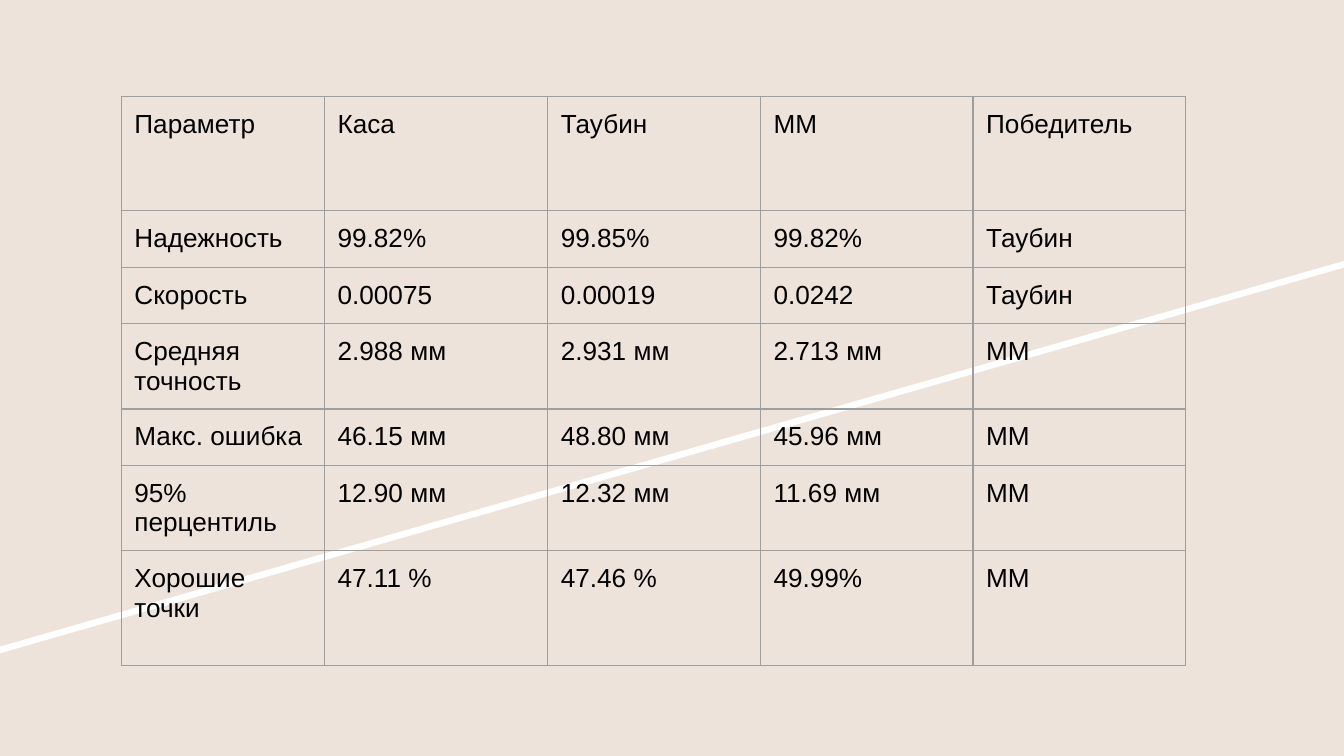
from lxml import etree
from pptx import Presentation
from pptx.dml.color import RGBColor
from pptx.oxml.ns import qn
from pptx.util import Cm, Pt

SLIDE_WIDTH, SLIDE_HEIGHT = Cm(25.4), Cm(14.29)
BEIGE, WHITE, BLACK, GREY = "EDE3DA", "FFFFFF", "000000", "9E9E9E"
STRIPE_OFFSET = 0.13
COLUMN_WIDTHS = [3.84, 4.22, 4.02, 4.02, 4.02]
ROW_HEIGHTS = [2.16, 1.07, 1.07, 1.61, 1.07, 1.61, 2.16]
CELL_MARGINS = {
    f"margin_{side}": Cm(0.25) for side in ("left", "top", "right", "bottom")
}
CELL_FONT = {"name": "Arial", "size": Pt(14), "bold": False}
RESULTS = [
    ["Параметр", "Каса", "Таубин", "ММ", "Победитель"],
    ["Надежность", "99.82%", "99.85%", "99.82%", "Таубин"],
    ["Скорость", "0.00075", "0.00019", "0.0242", "Таубин"],
    ["Средняя точность", "2.988 мм", "2.931 мм", "2.713 мм", "ММ"],
    ["Макс. ошибка", "46.15 мм", "48.80 мм", "45.96 мм", "ММ"],
    ["95% перцентиль", "12.90 мм", "12.32 мм", "11.69 мм", "ММ"],
    ["Хорошие точки", "47.11 %", "47.46 %", "49.99%", "MM"],
]


def paint(fill, color):
    """Fill with a solid colour given as a hex string."""
    fill.solid()
    fill.fore_color.rgb = RGBColor.from_string(color)


def set_attributes(target, values):
    """Set each named attribute of the target."""
    for name, value in values.items():
        setattr(target, name, value)


def add_slanted_panel(slide, top, color):
    """Add a full-width panel with a slanted lower edge."""
    corners = [(25.4, top), (25.4, top + 4.93), (0, top + 12.22)]
    builder = slide.shapes.build_freeform(0, Cm(top))
    builder.add_line_segments([(Cm(x), Cm(y)) for x, y in corners], close=True)
    panel = builder.convert_to_shape()
    paint(panel.fill, color)
    panel.line.fill.background()
    panel.shadow.inherit = False


def add_borders(cell, color, width):
    """Outline a cell on all four sides."""
    properties = cell._tc.get_or_add_tcPr()
    for side in ("lnL", "lnR", "lnT", "lnB"):
        border = etree.SubElement(properties, qn(f"a:{side}"), w=str(width))
        solid = etree.SubElement(border, qn("a:solidFill"))
        etree.SubElement(solid, qn("a:srgbClr"), val=color)


def fill_cell(cell, text):
    """Write and format one table cell."""
    set_attributes(cell, {"text": text, **CELL_MARGINS})
    font = cell.text_frame.paragraphs[0].runs[0].font
    set_attributes(font, CELL_FONT)
    paint(font.fill, BLACK)
    add_borders(cell, GREY, Pt(0.75))
    cell.fill.background()


def add_results_table(slide):
    """Add the table of results."""
    table = slide.shapes.add_table(
        len(RESULTS), len(COLUMN_WIDTHS), Cm(2.29), Cm(1.82),
        Cm(sum(COLUMN_WIDTHS)), Cm(sum(ROW_HEIGHTS)),
    ).table
    set_attributes(table, {"first_row": False, "horz_banding": False})
    for column, width in zip(table.columns, COLUMN_WIDTHS):
        column.width = Cm(width)
    for row, height, values in zip(table.rows, ROW_HEIGHTS, RESULTS):
        row.height = Cm(height)
        for cell, value in zip(row.cells, values):
            fill_cell(cell, value)


def main():
    """Build and save the slide."""
    deck = Presentation()
    set_attributes(deck, {"slide_width": SLIDE_WIDTH, "slide_height": SLIDE_HEIGHT})
    slide = deck.slides.add_slide(deck.slide_layouts[6])
    paint(slide.background.fill, BEIGE)
    add_slanted_panel(slide, STRIPE_OFFSET, WHITE)
    add_slanted_panel(slide, 0, BEIGE)
    add_results_table(slide)
    deck.save("out.pptx")


if __name__ == "__main__":
    main()
